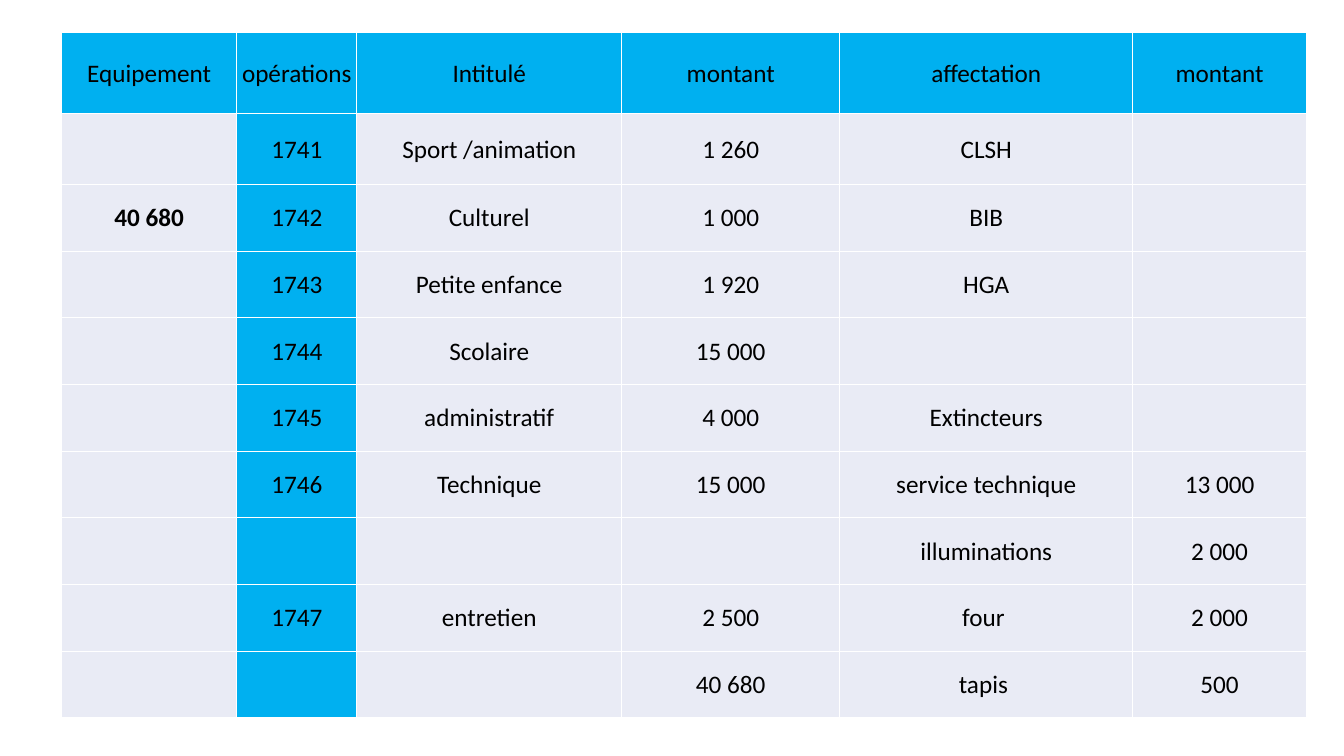
from lxml.etree import SubElement
from pptx import Presentation
from pptx.dml.color import RGBColor
from pptx.enum.text import MSO_ANCHOR as Anchor, PP_ALIGN as Align
from pptx.oxml.ns import qn
from pptx.util import Cm, Pt

# Content
BUDGET = [
    ("Equipement", "opérations", "Intitulé", "montant", "affectation", "montant"),
    ("", "1741", "Sport /animation", "1 260", "CLSH", ""),
    ("40 680", "1742", "Culturel", "1 000", "BIB", ""),
    ("", "1743", "Petite enfance", "1 920", "HGA", ""),
    ("", "1744", "Scolaire", "15 000", "", ""),
    ("", "1745", "administratif", "4 000", "Extincteurs", ""),
    ("", "1746", "Technique", "15 000", "service technique", "13 000"),
    ("", "", "", "", "illuminations", "2 000"),
    ("", "1747", "entretien", "2 500", "four ", "2 000"),
    ("", "", "", "40 680", "tapis ", "500"),
]

# Layout in centimetres
LEFT, TOP = 1.55, 0.81
COLUMN_WIDTHS = [4.42, 3.02, 6.68, 5.49, 7.39, 4.37]
ROW_HEIGHTS = [2.06, 1.78] + [1.68] * (len(BUDGET) - 2)
OPERATION_COLUMN = 1

BLUE, PALE, WHITE, BLACK = "00B0F0", "E9EBF5", "FFFFFF", "000000"


def paint(fill, color):
    fill.solid()
    fill.fore_color.rgb = RGBColor.from_string(color)


def add_borders(cell, color, width):
    properties = cell._tc.get_or_add_tcPr()
    for side in ("a:lnL", "a:lnR", "a:lnT", "a:lnB"):
        line = SubElement(properties, qn(side), w=str(width))
        solid = SubElement(line, qn("a:solidFill"))
        SubElement(solid, qn("a:srgbClr"), val=color)


def format_cell(cell, text, fill, bold):
    add_borders(cell, WHITE, Pt(1))
    paint(cell.fill, fill)
    cell.vertical_anchor = Anchor.MIDDLE
    cell.margin_left = cell.margin_right = cell.margin_top = Cm(0.02)
    cell.margin_bottom = 0
    cell.text_frame.text = text
    para = cell.text_frame.paragraphs[0]
    para.alignment = Align.CENTER
    for span in para.runs:
        span.font.name = "Calibri"
        span.font.size = Pt(18)
        span.font.bold = bold
        paint(span.font.fill, BLACK)


# Slide
deck = Presentation()
deck.slide_width, deck.slide_height = Cm(33.87), Cm(19.05)
page = deck.slides.add_slide(deck.slide_layouts[6])

# Budget table
table = page.shapes.add_table(
    len(BUDGET), len(COLUMN_WIDTHS), Cm(LEFT), Cm(TOP),
    Cm(sum(COLUMN_WIDTHS)), Cm(sum(ROW_HEIGHTS)),
).table
table.horz_banding = False
for column, width in zip(table.columns, COLUMN_WIDTHS):
    column.width = Cm(width)
for row, height in zip(table.rows, ROW_HEIGHTS):
    row.height = Cm(height)

for i, texts in enumerate(BUDGET):
    for j, text in enumerate(texts):
        fill = BLUE if i == 0 or j == OPERATION_COLUMN else PALE
        # The overall total in the first column is bold
        format_cell(table.cell(i, j), text, fill, bold=i > 0 and j == 0)

deck.save("out.pptx")
